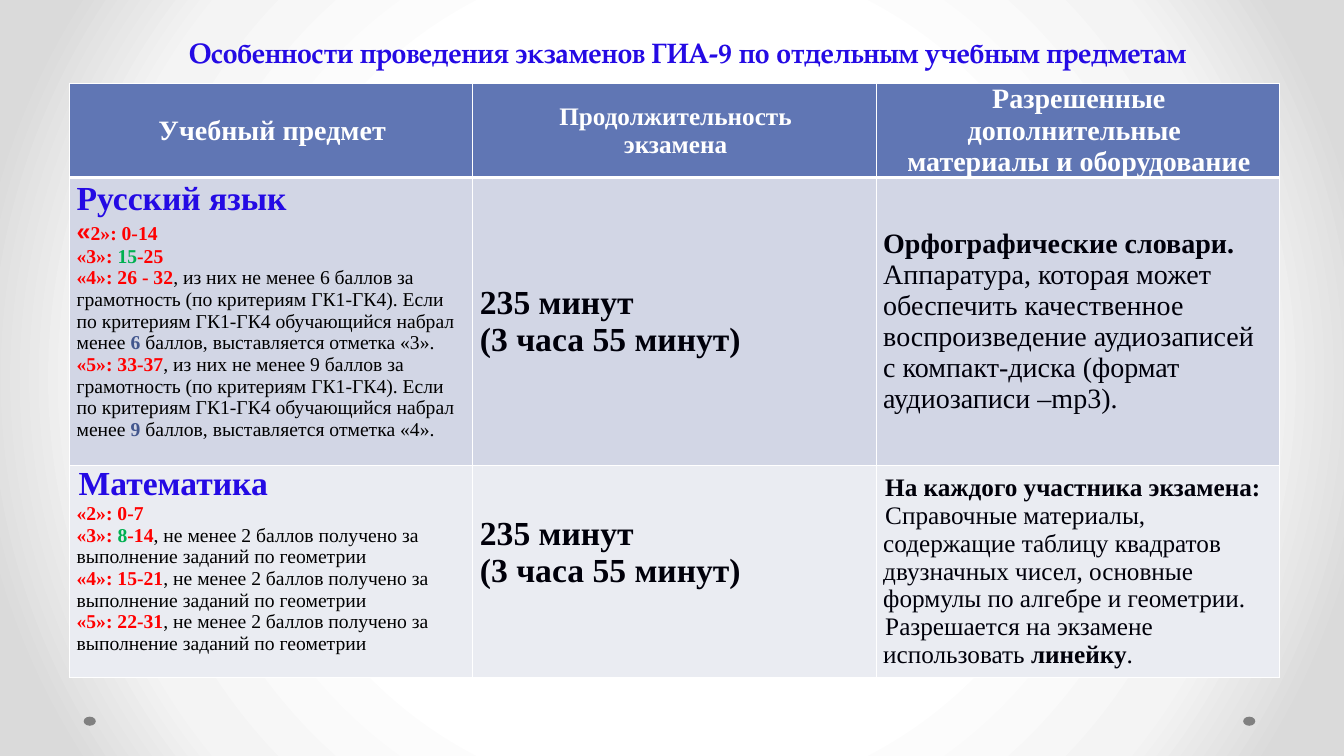
from pptx import Presentation
from pptx.dml.color import RGBColor as Rgb
from pptx.enum.shapes import MSO_SHAPE as Kind
from pptx.enum.text import MSO_ANCHOR as Anchor, PP_ALIGN as Align
from pptx.oxml import parse_xml as to_xml
from pptx.util import Inches, Pt

NS = 'xmlns:a="http://schemas.openxmlformats.org/drawingml/2006/main"'
BLUE, RED, GREEN, NAVY = "240AE4", "FF0000", "00B050", "42568D"
WHITE, BLACK, INK = "FFFFFF", "000000", "00000A"


def paint(hue):
    return Rgb.from_string(hue)


class Deck:
    face = "Times New Roman"
    fills = ["6076B4", "D2D6E5", "EAECF2"]

    def __init__(self):
        self.file = Presentation()
        self.file.slide_width, self.file.slide_height = Inches(13.33), Inches(7.5)
        self.page = self.file.slides.add_slide(self.file.slide_layouts[5])

    def back(self, stops):
        self.page.background.fill.solid()
        base = self.page.element.xpath("p:cSld/p:bg/p:bgPr")[0]
        marks = "".join(f'<a:gs pos="{pos * 1000}"><a:srgbClr val="{hue}"/></a:gs>'
                        for pos, hue in stops)
        base.replace(base[0], to_xml(
            f'<a:gradFill {NS} rotWithShape="1"><a:gsLst>{marks}</a:gsLst>'
            '<a:path path="circle"><a:fillToRect l="50000" t="50000" r="50000" b="50000"/>'
            '</a:path></a:gradFill>'))

    def dot(self, left, top):
        dot = self.page.shapes.add_shape(
            Kind.OVAL, Inches(left), Inches(top), Inches(0.12), Inches(0.09))
        dot.shadow.inherit = False
        dot.fill.solid()
        dot.fill.fore_color.rgb = paint("808080")
        dot.line.fill.background()

    def run(self, para, text, size, hue, bold=True, face=None):
        run = para.add_run()
        run.text = text
        font = run.font
        font.name, font.size, font.bold = face or self.face, Pt(size), bold
        font.color.rgb = paint(hue)

    def title(self, text):
        head = self.page.shapes.title
        head.left, head.top = Inches(0.58), Inches(0.33)
        head.width, head.height = Inches(12.48), Inches(1.19)
        frame = head.text_frame
        frame.vertical_anchor = Anchor.TOP
        frame.margin_top = Inches(0.02)
        para = frame.paragraphs[0]
        para.alignment = Align.CENTER
        self.run(para, text, 20, BLUE, face="TeX Gyre Pagella")

    def edge(self, cell, row):
        props = cell._tc.get_or_add_tcPr()
        for spot, side in enumerate("LRTB"):
            wide = 3 if (row, side) in [(0, "B"), (1, "T")] else 1
            props.insert(spot, to_xml(
                f'<a:ln{side} {NS} w="{Pt(wide)}"><a:solidFill>'
                f'<a:srgbClr val="{WHITE}"/></a:solidFill></a:ln{side}>'))

    def cell(self, cell, row, paras, dent=(), foot=0):
        cell.margin_left = cell.margin_right = Inches(0.07)
        cell.margin_top, cell.margin_bottom = 0, Inches(foot)
        cell.vertical_anchor = Anchor.MIDDLE
        cell.fill.solid()
        cell.fill.fore_color.rgb = paint(self.fills[row])
        self.edge(cell, row)
        frame = cell.text_frame
        for spot, runs in enumerate(paras):
            para = frame.add_paragraph() if spot else frame.paragraphs[0]
            para.alignment = Align.LEFT if row else Align.CENTER
            if spot in dent:
                para._p.get_or_add_pPr().set("indent", str(Inches(0.02)))
            for run in runs:
                self.run(para, *run)

    def table(self, left, top, cols, rows, cells):
        grid = self.page.shapes.add_table(
            len(rows), len(cols), Inches(left), Inches(top),
            Inches(sum(cols)), Inches(sum(rows))).table
        for col, wide in zip(grid.columns, cols):
            col.width = Inches(wide)
        for line, tall in zip(grid.rows, rows):
            line.height = Inches(tall)
        for row, line in enumerate(cells):
            for col, data in enumerate(line):
                self.cell(grid.cell(row, col), row, **data)


def mark(text):
    return (text, 14, RED)


def note(text):
    return (text, 14, BLACK, False)


def head(size, *lines):
    return dict(paras=[[(line, size, WHITE)] for line in lines], dent=range(2))


def time(foot=0):
    lines = ["235 минут", "(3 часа 55 минут)"]
    return dict(paras=[[(line, 24, INK)] for line in lines], foot=foot)


def level(score, least, limit, grade):
    return [mark(score),
            note(f", из них не менее {least} баллов за грамотность (по критериям ГК1-ГК4). "
                 "Если по критериям ГК1-ГК4 обучающийся набрал менее "),
            (limit, 14, NAVY), note(f" баллов, выставляется отметка «{grade}».")]


def main():
    geo = note(", не менее 2 баллов получено за выполнение заданий по геометрии")
    lang = dict(foot=0.22, paras=[
        [("Русский язык", 24, BLUE)],
        [("«", 18, RED, True, "Arial"), mark("2»: 0-14")],
        [mark("«3»: "), ("15", 14, GREEN), mark("-25")],
        level("«4»: 26 - 32", 6, "6", 3),
        level("«5»: 33-37", 9, "9", 4)])
    sound = dict(paras=[
        [("Орфографические словари.", 20, INK)],
        [("Аппаратура, которая может обеспечить качественное воспроизведение аудиозаписей "
          "с компакт-диска (формат аудиозаписи –mp3).", 20, INK, False)]])
    maths = dict(foot=0.22, dent=[0], paras=[
        [("Математика", 24, BLUE)],
        [mark("«2»: 0-7")],
        [mark("«3»: "), ("8", 14, GREEN), mark("-14"), geo],
        [mark("«4»: 15-21"), geo],
        [mark("«5»: 22-31"), geo]])
    tools = dict(dent=range(3), paras=[
        [("На каждого участника экзамена:", 18, INK)],
        [("Справочные материалы, содержащие таблицу квадратов двузначных чисел, "
          "основные формулы по алгебре и геометрии.", 18, INK, False)],
        [("Разрешается на экзамене использовать ", 18, INK, False),
         ("линейку", 18, INK), (".", 18, INK, False)]])

    deck = Deck()
    deck.back([(50, "FFFFFF"), (76, "F4F4F4"), (92, "DADADA")])
    for left in (12.33, 0.83):
        deck.dot(left, 7.11)
    deck.title("Особенности проведения экзаменов ГИА-9 по отдельным учебным предметам")
    deck.table(0.69, 0.83, [4] * 3, [0.93, 2.86, 2.1], [
        [head(20, "Учебный предмет"),
         head(18, "Продолжительность", "экзамена"),
         head(20, "Разрешенные дополнительные ", "материалы и оборудование")],
        [lang, time(), sound],
        [maths, time(0.37), tools]])
    deck.file.save("out.pptx")


if __name__ == "__main__":
    main()
